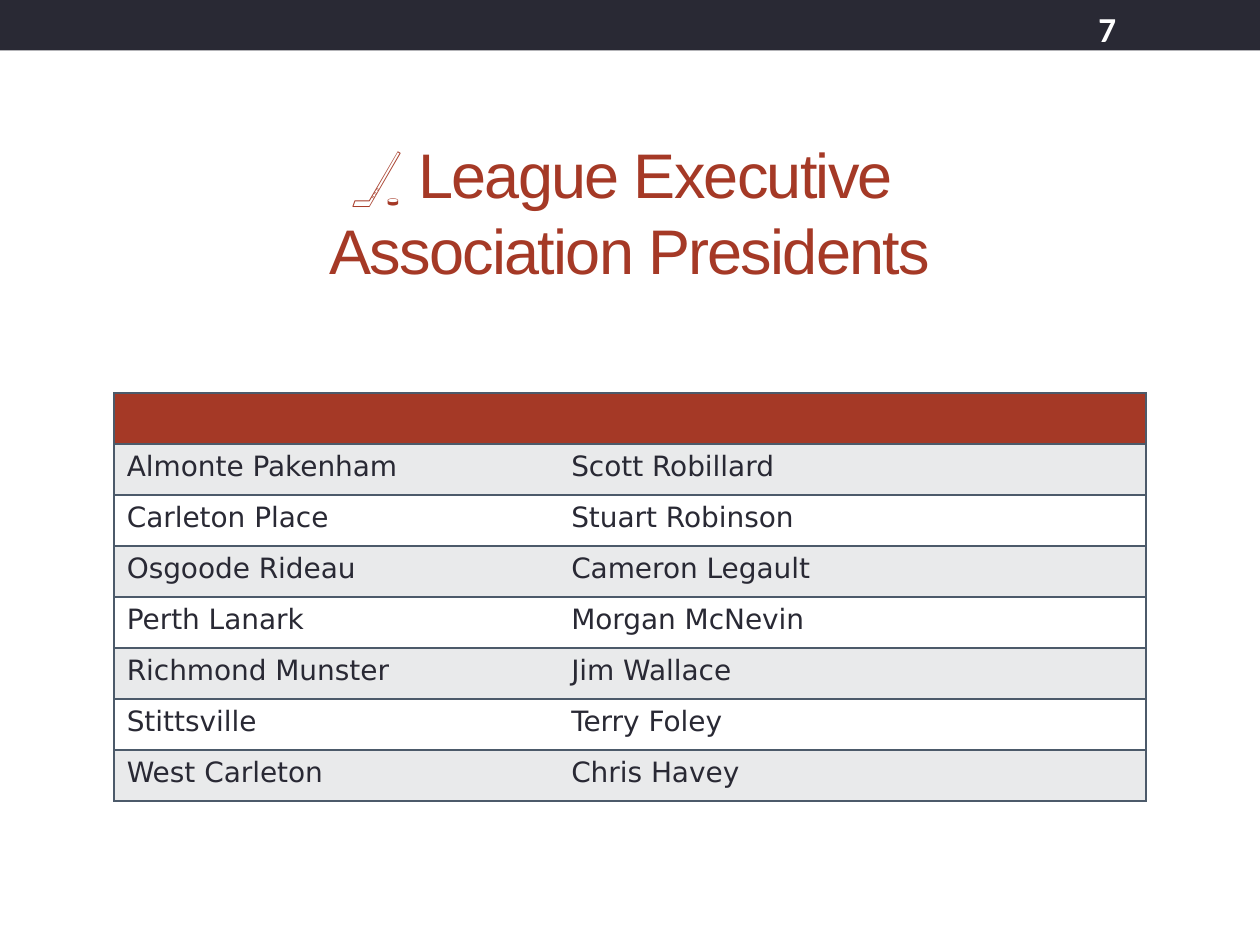
from dataclasses import dataclass

from lxml.etree import SubElement
from pptx import Presentation
from pptx.dml.color import RGBColor
from pptx.enum.shapes import MSO_SHAPE
from pptx.enum.text import MSO_ANCHOR, PP_ALIGN
from pptx.oxml.ns import qn
from pptx.util import Pt

TITLE = ["🏒 League Executive ", "Association Presidents"]
NUMBER = "7"
ROWS = [
    ("", ""),
    ("Almonte Pakenham", "Scott Robillard"),
    ("Carleton Place", "Stuart Robinson"),
    ("Osgoode Rideau", "Cameron Legault"),
    ("Perth Lanark", "Morgan McNevin"),
    ("Richmond Munster", "Jim Wallace"),
    ("Stittsville", "Terry Foley"),
    ("West Carleton", "Chris Havey"),
]
WIDTHS = (254, 335.5)
HEIGHT = 29.15


@dataclass(frozen=True)
class Theme:
    dark: str = "292934"
    red: str = "A53926"
    band: str = "E9EAEB"
    white: str = "FFFFFF"
    rule: str = "4C5A6A"
    title: tuple = ("Arial", 36)
    number: tuple = ("Calibri", 20)
    body: tuple = ("DejaVu Sans", 16)


THEME = Theme()


def paint(fill, color):
    fill.solid()
    fill.fore_color.rgb = RGBColor.from_string(color)


def add_run(para, text, face, color, bold=False):
    run = para.add_run()
    run.text = text
    font = run.font
    font.name, size = face
    font.size = Pt(size)
    font.bold = bold
    font.color.rgb = RGBColor.from_string(color)
    return run


def add_box(slide, *area):
    """Add a wrapped, middle-anchored text box and return its paragraph."""
    frame = slide.shapes.add_textbox(*map(Pt, area)).text_frame
    frame.word_wrap = True
    frame.vertical_anchor = MSO_ANCHOR.MIDDLE
    return frame.paragraphs[0]


def add_edges(cell, shown):
    """Rule the named sides of a cell and clear the others."""
    props = cell._tc.get_or_add_tcPr()
    for spot, side in enumerate("LRTB"):
        line = SubElement(props, qn(f"a:ln{side}"), w=str(Pt(1)))
        if side in shown:
            fill = SubElement(line, qn("a:solidFill"))
            SubElement(fill, qn("a:srgbClr"), val=THEME.rule)
        else:
            SubElement(line, qn("a:noFill"))
        props.insert(spot, line)


def add_bar(slide):
    bar = slide.shapes.add_shape(MSO_SHAPE.RECTANGLE, 0, 0, Pt(720), Pt(28.8))
    bar.shadow.inherit = False
    paint(bar.fill, THEME.dark)
    bar.line.fill.background()


def add_title(slide):
    para = add_box(slide, 36, 94.5, 648, 52.5)
    para.alignment = PP_ALIGN.CENTER
    for index, text in enumerate(TITLE):
        if index:
            para.add_line_break()
        run = add_run(para, text, THEME.title, THEME.red)
        run.font._element.set("spc", "-100")


def add_roster(slide):
    frame = slide.shapes.add_table(
        len(ROWS), len(WIDTHS), Pt(65.25), Pt(224.5),
        Pt(sum(WIDTHS)), Pt(HEIGHT * len(ROWS)))
    table = frame.table
    for column, width in zip(table.columns, WIDTHS):
        column.width = Pt(width)
    for r, names in enumerate(ROWS):
        table.rows[r].height = Pt(HEIGHT)
        shade = THEME.band if r % 2 else THEME.white
        for c, name in enumerate(names):
            cell = table.cell(r, c)
            paint(cell.fill, shade if r else THEME.red)
            add_edges(cell, "TB" + "LR"[c])
            if name:
                add_run(cell.text_frame.paragraphs[0], name, THEME.body, THEME.dark)


def main():
    deck = Presentation()
    deck.slide_width, deck.slide_height = Pt(720), Pt(540)
    slide = deck.slides.add_slide(deck.slide_layouts[6])
    paint(slide.background.fill, THEME.white)
    add_bar(slide)
    add_roster(slide)
    add_title(slide)
    para = add_box(slide, 620.5, 3, 84, 26)
    add_run(para, NUMBER, THEME.number, THEME.white, bold=True)
    deck.save("out.pptx")


if __name__ == "__main__":
    main()
